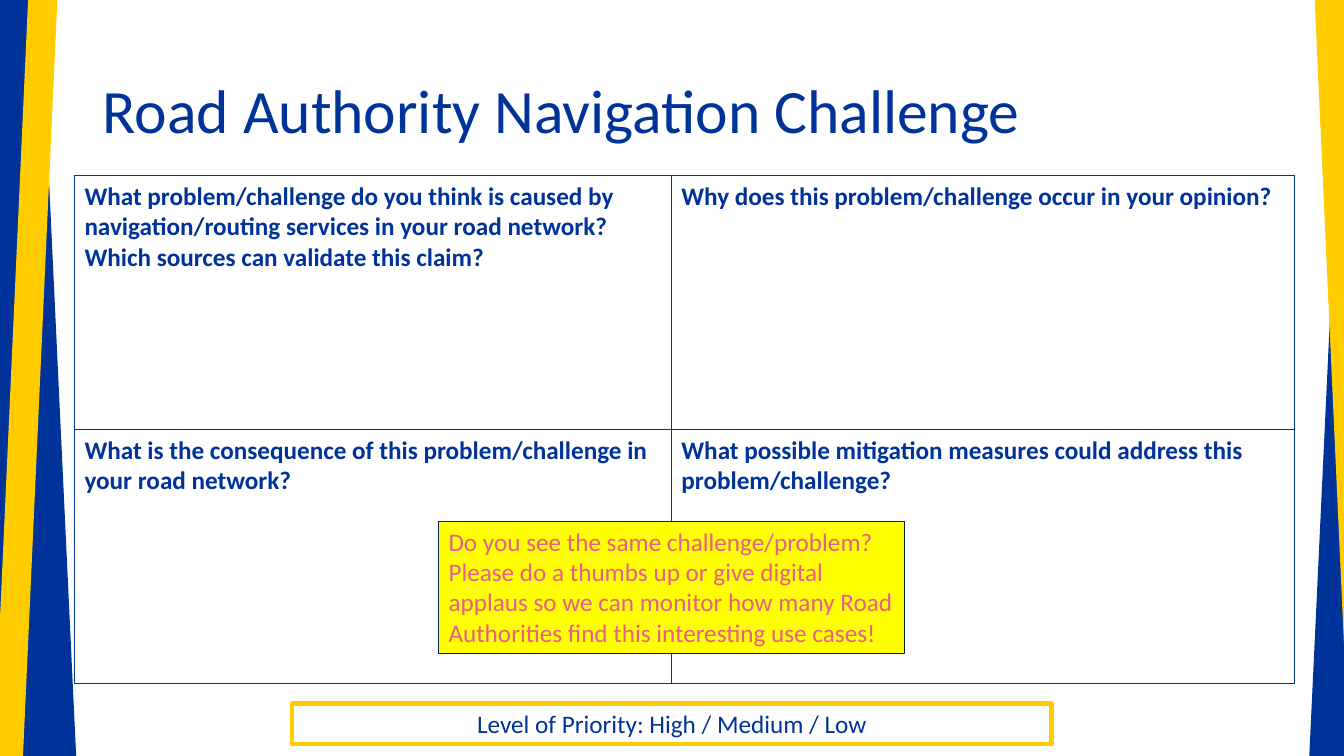
from pptx import Presentation
from pptx.dml.color import RGBColor
from pptx.enum.shapes import MSO_SHAPE
from pptx.enum.text import MSO_ANCHOR, PP_ALIGN
from pptx.util import Pt

RECT = MSO_SHAPE.RECTANGLE
TOP, MIDDLE = MSO_ANCHOR.TOP, MSO_ANCHOR.MIDDLE
LEFT, CENTER = PP_ALIGN.LEFT, PP_ALIGN.CENTER
PX = 9144  # 100 px to the inch

THEME = {
    "font": "Calibri",
    "title": 44,
    "body": 18,
    "blue": RGBColor.from_string("003399"),
    "gold": RGBColor.from_string("FFCC00"),
    "white": RGBColor.from_string("FFFFFF"),
    "yellow": RGBColor.from_string("FFFF00"),
    "navy": RGBColor.from_string("002060"),
    "pink": RGBColor.from_string("EA5D8B"),
}

prs = Presentation()
prs.slide_width, prs.slide_height = 1333 * PX, 750 * PX
slide = prs.slides.add_slide(prs.slide_layouts[6])


def add_box(area, fill, line=None, weight=1):
    box = slide.shapes.add_shape(RECT, *[n * PX for n in area])
    box.shadow.inherit = False
    box.fill.solid()
    box.fill.fore_color.rgb = THEME[fill]
    if line:
        box.line.color.rgb = THEME[line]
        box.line.width = Pt(weight)
    else:
        box.line.fill.background()
    return box


def write(shape, lines, size="body", color="blue", bold=False, align=LEFT, anchor=TOP):
    frame = shape.text_frame
    frame.word_wrap = True
    frame.vertical_anchor = anchor
    for i, line in enumerate(lines):
        para = frame.add_paragraph() if i else frame.paragraphs[0]
        para.alignment = align
        run = para.add_run()
        run.text = line
        run.font.name = THEME["font"]
        run.font.size = Pt(THEME[size])
        run.font.bold = bold
        run.font.color.rgb = THEME[color]


# Slanted side bands
bands = [
    ((-16, -18, 74, 791), -2.7, "blue"),
    ((11, -16, 29, 776), 2.6, "gold"),
    ((1316, -14, 74, 791), 2.7, "blue"),
    ((1321, -13, 29, 776), -2.6, "gold"),
]
for area, angle, fill in bands:
    add_box(area, fill).rotation = angle

# Title
title = slide.shapes.add_textbox(92 * PX, 40 * PX, 1150 * PX, 145 * PX)
write(title, ["Road Authority Navigation Challenge"], size="title", anchor=MIDDLE)
title.text_frame.paragraphs[0].line_spacing = 0.9

# Two by two question grid
columns = [(74, 593), (666, 618)]
first, height = 174, 252
questions = [
    ["What problem/challenge do you think is caused by navigation/routing services "
     "in your road network? Which sources can validate this claim?",
     "Why does this problem/challenge occur in your opinion?"],
    ["What is the consequence of this problem/challenge in your road network?",
     "What possible mitigation measures could address this problem/challenge?"],
]
for row, pair in enumerate(questions):
    for (left, width), text in zip(columns, pair):
        cell = add_box((left, first + row * height, width, height), "white", "blue")
        write(cell, [text], bold=True)

# Priority bar
bar = add_box((290, 698, 753, 40), "white", "gold", 3)
write(bar, ["Level of Priority: High / Medium / Low"], align=CENTER)

# Call for reactions
note = add_box((435, 517, 462, 131), "yellow", "navy", 0.75)
write(note, [
    "Do you see the same challenge/problem?",
    "Please do a thumbs up or give digital applaus so we can monitor "
    "how many Road Authorities find this interesting use cases!",
], color="pink")

prs.save("out.pptx")
